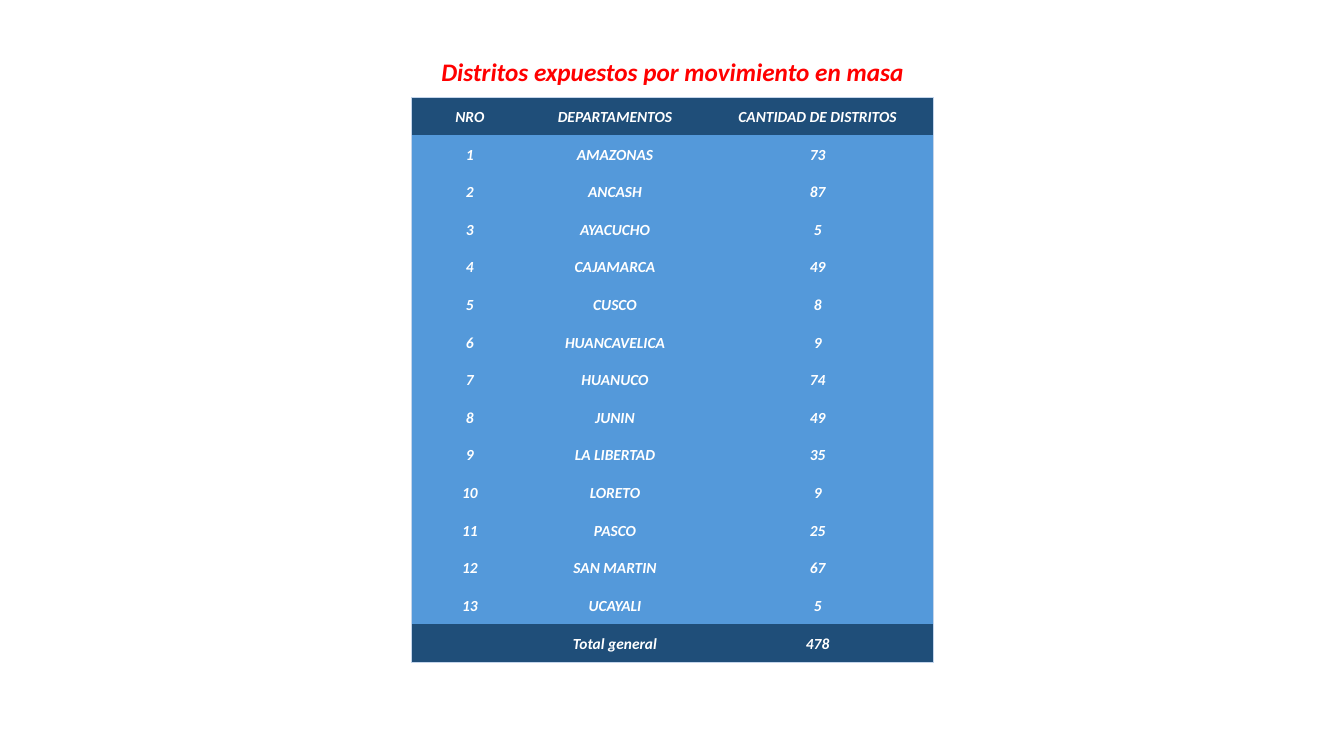
from dataclasses import dataclass

from lxml import etree
from pptx import Presentation
from pptx.dml.color import RGBColor
from pptx.enum.text import MSO_ANCHOR, MSO_AUTO_SIZE, PP_ALIGN
from pptx.oxml.ns import qn
from pptx.util import Inches, Pt

CENTER = PP_ALIGN.CENTER
TOP = MSO_ANCHOR.TOP
MIDDLE = MSO_ANCHOR.MIDDLE
FIT = MSO_AUTO_SIZE.SHAPE_TO_FIT_TEXT

TITLE = "Distritos expuestos por movimiento en masa"
HEAD = ("NRO", "DEPARTAMENTOS", "CANTIDAD DE DISTRITOS")
COUNTS = [
    ("AMAZONAS", 73),
    ("ANCASH", 87),
    ("AYACUCHO", 5),
    ("CAJAMARCA", 49),
    ("CUSCO", 8),
    ("HUANCAVELICA", 9),
    ("HUANUCO", 74),
    ("JUNIN", 49),
    ("LA LIBERTAD", 35),
    ("LORETO", 9),
    ("PASCO", 25),
    ("SAN MARTIN", 67),
    ("UCAYALI", 5),
]
TOTAL = ("", "Total general", 478)
WIDTHS = (1.16, 1.72, 2.3)
LEFT, UPPER, HEIGHT = 4.08, 0.97, 5.6


@dataclass(frozen=True)
class Theme:
    font: str = "Calibri"
    title: str = "FF0000"
    text: str = "FFFFFF"
    dark: str = "1F4E79"
    light: str = "5499DA"
    edge: str = "C4D5EB"
    big: int = 18
    small: int = 11
    line: float = 0.5


theme = Theme()


def write(frame, text, size, color):
    para = frame.paragraphs[0]
    para.alignment = CENTER
    run = para.add_run()
    run.text = text
    font = run.font
    font.name, font.size = theme.font, Pt(size)
    font.bold = font.italic = True
    font.color.rgb = RGBColor.from_string(color)


def border(cell, sides):
    props = cell._tc.get_or_add_tcPr()
    for spot, (side, shown) in enumerate(sides.items()):
        line = etree.Element(qn(f"a:ln{side}"), w=str(Pt(theme.line)))
        if shown:
            fill = etree.SubElement(line, qn("a:solidFill"))
            etree.SubElement(fill, qn("a:srgbClr"), val=theme.edge)
        else:
            etree.SubElement(line, qn("a:noFill"))
        props.insert(spot, line)


def add_title(slide):
    title = slide.shapes.title
    title.left, title.top = Inches(4.25), Inches(0.51)
    title.width, title.height = Inches(4.84), Inches(0.4)
    frame = title.text_frame
    frame.word_wrap = False
    frame.auto_size = FIT
    frame.vertical_anchor = TOP
    write(frame, TITLE, theme.big, theme.title)


def add_grid(slide):
    body = [(num, *pair) for num, pair in enumerate(COUNTS, 1)]
    rows = [HEAD, *body, TOTAL]
    last, end = len(rows) - 1, len(WIDTHS) - 1
    grid = slide.shapes.add_table(
        len(rows), len(WIDTHS), Inches(LEFT), Inches(UPPER),
        Inches(sum(WIDTHS)), Inches(HEIGHT),
    ).table
    for col, width in zip(grid.columns, WIDTHS):
        col.width = Inches(width)
    for r, row in enumerate(rows):
        for c, value in enumerate(row):
            cell = grid.cell(r, c)
            cell.margin_left = cell.margin_right = cell.margin_top = Inches(0.01)
            cell.margin_bottom = 0
            cell.vertical_anchor = MIDDLE
            cell.fill.solid()
            shade = theme.dark if r in (0, last) else theme.light
            cell.fill.fore_color.rgb = RGBColor.from_string(shade)
            border(cell, {"L": c == 0, "R": c == end, "T": r == 0, "B": r == last})
            if value != "":
                write(cell.text_frame, str(value), theme.small, theme.text)


def main():
    deck = Presentation()
    deck.slide_width, deck.slide_height = Inches(13.33), Inches(7.5)
    slide = deck.slides.add_slide(deck.slide_layouts[5])
    add_title(slide)
    add_grid(slide)
    deck.save("out.pptx")


if __name__ == "__main__":
    main()
